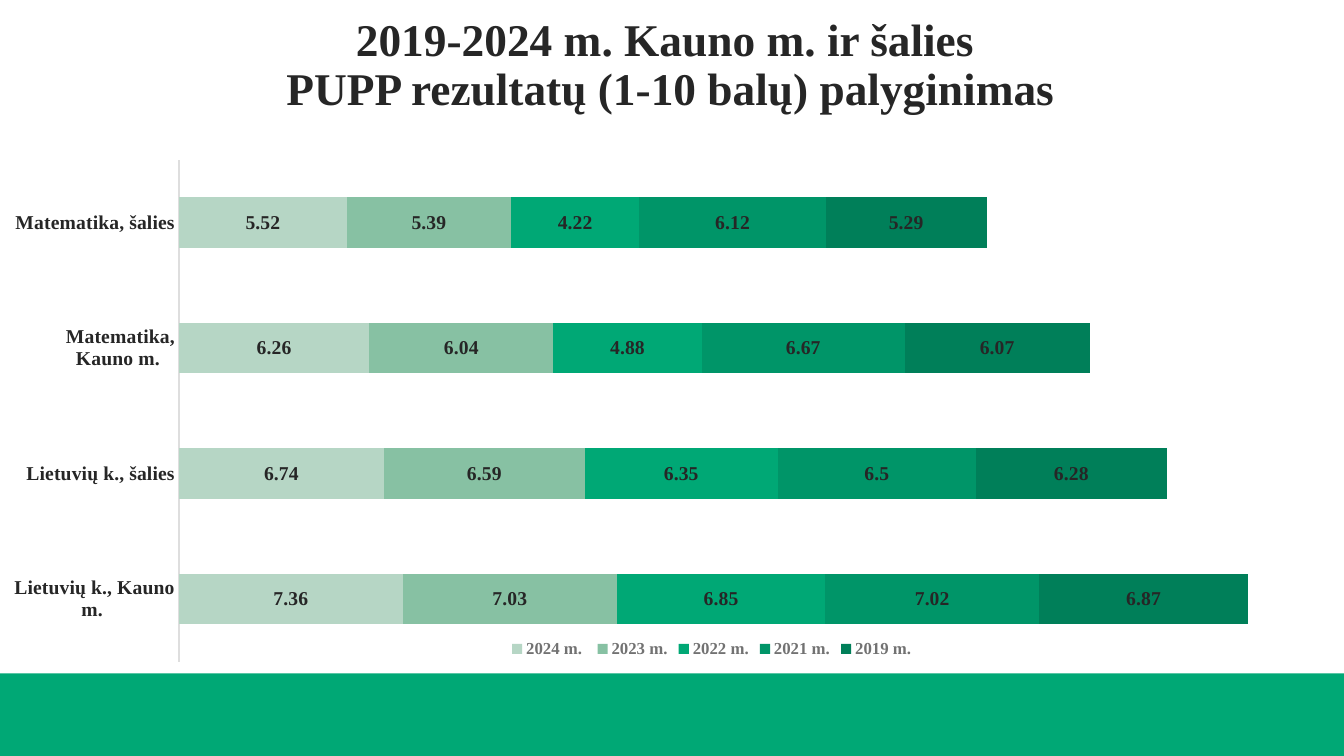
import pptx
import pptx.util
import pptx.chart.data
import pptx.dml.color
import pptx.enum.chart
import pptx.enum.shapes
import pptx.enum.text
import pptx.oxml

Inches = pptx.util.Inches
FONT = "Times New Roman"
DARK = "262626"
GREY = "727272"
GREEN = "00A875"
TITLE = "2019-2024 m. Kauno m. ir šalies \vPUPP rezultatų (1-10 balų) palyginimas"
CATEGORIES = ["Lietuvių k., Kauno m. ", "Lietuvių k., šalies",
              "Matematika, Kauno m. ", "Matematika, šalies"]
SERIES = [
    ("2024 m. ", (7.36, 6.74, 6.26, 5.52), "B6D6C5"),
    ("2023 m.", (7.03, 6.59, 6.04, 5.39), "87C1A3"),
    ("2022 m.", (6.85, 6.35, 4.88, 4.22), GREEN),
    ("2021 m.", (7.02, 6.5, 6.67, 6.12), "009568"),
    ("2019 m. ", (6.87, 6.28, 6.07, 5.29), "007F59"),
]
PLOT_LAYOUT = {"x": 0.12, "y": 0, "w": 0.865, "h": 1}


def rgb(value):
    """Return the colour for a hex string."""
    return pptx.dml.color.RGBColor.from_string(value)


def set_attributes(target, values):
    """Set every attribute named in a dict of format values."""
    for name, value in values.items():
        setattr(target, name, value)


def format_font(font, size, color, bold=True):
    """Apply the slide's typeface with a size, colour and weight."""
    set_attributes(font, {"name": FONT, "size": pptx.util.Pt(size), "bold": bold})
    font.color.rgb = rgb(color)


def add_band(slide, left, top, width, height):
    """Draw the plain green band in the given box."""
    shape = slide.shapes.add_shape(
        pptx.enum.shapes.MSO_SHAPE.RECTANGLE,
        Inches(left), Inches(top), Inches(width), Inches(height))
    shape.shadow.inherit = False
    shape.fill.solid()
    shape.fill.fore_color.rgb = rgb(GREEN)
    shape.line.fill.background()


def add_title(slide, left, top, width, height):
    """Fill the title placeholder and move it to the given box."""
    title = slide.shapes.title
    set_attributes(title, {"left": Inches(left), "top": Inches(top),
                           "width": Inches(width), "height": Inches(height)})
    set_attributes(title.text_frame, {
        "text": TITLE,
        "word_wrap": True,
        "auto_size": pptx.enum.text.MSO_AUTO_SIZE.NONE,
        "vertical_anchor": pptx.enum.text.MSO_ANCHOR.BOTTOM,
    })
    paragraph = title.text_frame.paragraphs[0]
    set_attributes(paragraph, {"alignment": pptx.enum.text.PP_ALIGN.CENTER,
                               "line_spacing": 0.9})
    for run in paragraph.runs:
        format_font(run.font, 32.4, DARK)


def set_plot_layout(chart):
    """Fix the inner plot area as fractions of the chart."""
    plot_area = chart.plots[0]._element.getparent()
    for layout in plot_area.findall(pptx.oxml.ns.qn("c:layout")):
        plot_area.remove(layout)
    modes = "".join(f'<c:{axis}Mode val="edge"/>' for axis in "xy")
    sizes = "".join(f'<c:{name} val="{value}"/>' for name, value in PLOT_LAYOUT.items())
    plot_area.insert(0, pptx.oxml.parse_xml(
        f'<c:layout {pptx.oxml.ns.nsdecls("c")}><c:manualLayout>'
        f'<c:layoutTarget val="inner"/>{modes}{sizes}'
        '</c:manualLayout></c:layout>'))


def format_axes(chart):
    """Style the category axis and hide the value axis."""
    tick_none = pptx.enum.chart.XL_TICK_MARK.NONE
    category_axis = chart.category_axis
    set_attributes(category_axis, {"major_tick_mark": tick_none,
                                   "minor_tick_mark": tick_none,
                                   "has_major_gridlines": False})
    format_font(category_axis.tick_labels.font, 14, DARK)
    category_axis.format.line.width = pptx.util.Pt(0.75)
    category_axis.format.line.color.rgb = rgb("DEDEDE")
    set_attributes(chart.value_axis, {"visible": False, "has_major_gridlines": False,
                                      "minimum_scale": 0, "maximum_scale": 40})


def add_results_chart(slide, left, top, width, height):
    """Add the stacked bar chart of results in the given box."""
    data = pptx.chart.data.CategoryChartData()
    data.categories = CATEGORIES
    for name, values, _ in SERIES:
        data.add_series(name, values)
    chart = slide.shapes.add_chart(
        pptx.enum.chart.XL_CHART_TYPE.BAR_STACKED,
        Inches(left), Inches(top), Inches(width), Inches(height), data).chart
    set_attributes(chart, {"has_title": False, "has_legend": True})
    format_font(chart.font, 10, DARK, False)
    format_axes(chart)
    set_plot_layout(chart)
    set_attributes(chart.legend, {
        "position": pptx.enum.chart.XL_LEGEND_POSITION.BOTTOM,
        "include_in_layout": False})
    format_font(chart.legend.font, 12, GREY)
    plot = chart.plots[0]
    set_attributes(plot, {"gap_width": 150, "overlap": 100, "vary_by_categories": False})
    for series, (_, _, color) in zip(plot.series, SERIES):
        series.format.fill.solid()
        series.format.fill.fore_color.rgb = rgb(color)
        set_attributes(series.data_labels, {
            "show_value": True,
            "position": pptx.enum.chart.XL_LABEL_POSITION.CENTER})
        format_font(series.data_labels.font, 14, DARK)


def main():
    """Build the slide and save the presentation."""
    presentation = pptx.Presentation()
    set_attributes(presentation, {"slide_width": Inches(13.33),
                                  "slide_height": Inches(7.5)})
    slide = presentation.slides.add_slide(presentation.slide_layouts[5])
    add_band(slide, 0, 6.68, 13.33, 0.82)
    add_title(slide, 0.6, 0.3, 12.1, 0.89)
    add_results_chart(slide, 0.1, 1.58, 13.96, 4.99)
    presentation.save("out.pptx")


if __name__ == "__main__":
    main()
